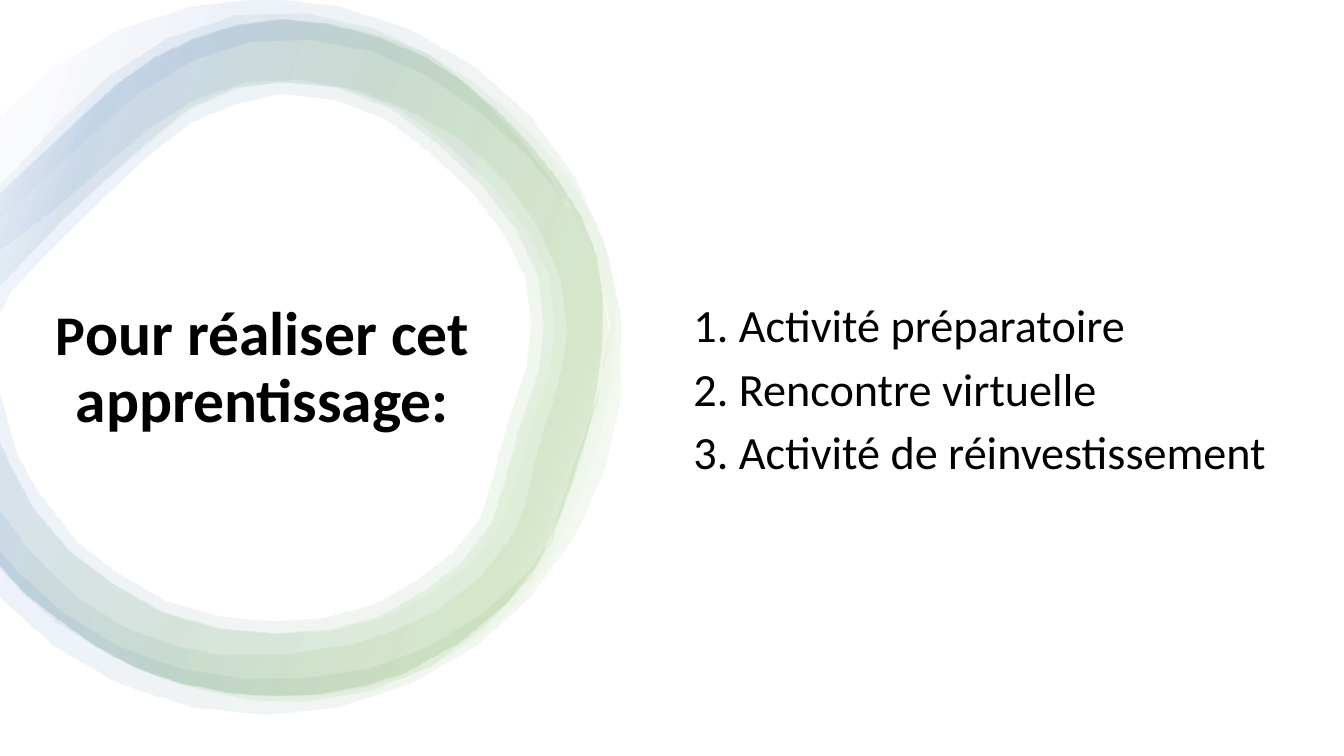
import math
from dataclasses import dataclass

from lxml import etree
from pptx import Presentation
from pptx.dml import color
from pptx.enum import text
from pptx.oxml import ns
from pptx.util import Pt


@dataclass(frozen=True)
class Theme:
    font: str = "Calibri"
    ink: str = "000000"
    green: str = "70AD47"
    blue: str = "4472C4"
    white: str = "FFFFFF"
    alpha: int = 9
    angle: int = 200
    first: int = 40
    head: int = 44
    item: int = 33


THEME = Theme()
UNIT = 0.72  # points per ring unit (a hundredth of an inch)
CHORD = 50  # usual length of a drawn segment, in ring units

# Ring edges run clockwise, from the upper left to the lower left.
WAVE_OUT = [
    (-1, 185), (18, 165), (60, 120), (108, 76), (165, 39), (233, 16), (304, 14),
    (372, 29), (426, 55), (483, 104), (546, 178), (593, 264), (604, 330),
    (593, 397), (569, 468), (548, 536), (526, 573), (481, 621), (427, 661),
    (365, 686), (299, 696), (250, 694), (170, 676), (110, 650), (55, 616),
    (24, 589), (-1, 562)]
WAVE_IN = [
    (-1, 250), (57, 206), (104, 165), (149, 127), (196, 98), (245, 82), (298, 80),
    (352, 89), (403, 109), (454, 137), (498, 176), (532, 223), (555, 275),
    (563, 330), (553, 383), (534, 443), (520, 502), (510, 528), (477, 572),
    (431, 607), (352, 638), (289, 648), (223, 649), (180, 642), (124, 622),
    (75, 591), (28, 544), (-1, 504)]
BAND_OUT = [
    (-1, 193), (55, 140), (154, 56), (278, 19), (417, 54), (525, 143), (591, 253),
    (591, 387), (553, 515), (502, 598), (399, 668), (270, 690), (136, 663),
    (26, 589), (-1, 559)]
SLIM_IN = [
    (-1, 285), (60, 220), (98, 184), (186, 108), (232, 87), (278, 81),
    (335, 87), (388, 108), (478, 184), (533, 273), (534, 366), (513, 428),
    (501, 473), (487, 518), (459, 555), (376, 611), (270, 628), (161, 607),
    (69, 546), (33, 503), (-1, 435)]
BROAD_IN = [
    (-1, 314), (12, 288), (69, 229), (107, 192), (190, 121), (278, 93), (332, 99),
    (382, 118), (469, 192), (521, 277), (522, 362), (501, 425), (489, 470),
    (476, 513), (450, 546), (371, 599), (271, 616), (166, 596), (77, 537),
    (38, 487), (17, 449), (-1, 384)]
DISC_IN = [
    (-1, 218), (41, 180), (89, 135), (137, 93), (189, 61), (246, 42), (307, 40),
    (367, 51), (423, 76), (474, 111), (521, 154), (562, 203), (591, 260),
    (604, 323), (593, 386), (567, 464), (545, 534), (523, 567), (477, 609),
    (423, 642), (365, 663), (303, 672), (240, 673), (178, 663), (119, 642),
    (64, 609), (16, 566), (-1, 545)]


def arc(mid_x, mid_y, radius, reach):
    """Points of a circle open on the left, reach degrees each way."""
    turns = [math.radians(deg) for deg in range(-reach, reach + 1, 12)]
    return [(mid_x + radius * math.cos(turn), mid_y + radius * math.sin(turn))
            for turn in turns]


def stretch(edge, ratio):
    return [(x * ratio, y) for x, y in edge]


def smooth(edge):
    """Catmull-Rom curve through an open edge, cut into even chords."""
    knots = [edge[0], *edge, edge[-1]]
    curve = []
    for a, b, c, d in zip(knots, knots[1:], knots[2:], knots[3:]):
        steps = max(1, round(math.dist(b, c) / CHORD))
        for step in range(steps):
            t = step / steps
            curve.append(tuple(
                q + t * (r - p + t * (2 * p - 5 * q + 4 * r - s
                                      + t * (3 * (q - r) + s - p))) / 2
                for p, q, r, s in zip(a, b, c, d)))
    return curve + [edge[-1]]


def fade(shape, stops):
    """Fill with a sheer linear gradient of (percent, colour) stops."""
    shape.fill.background()
    blank = shape.element.spPr.find(ns.qn("a:noFill"))
    grad = etree.Element(ns.qn("a:gradFill"), rotWithShape="1")
    row = etree.SubElement(grad, ns.qn("a:gsLst"))
    for place, tone in stops:
        stop = etree.SubElement(row, ns.qn("a:gs"), pos=str(place * 1000))
        paint = etree.SubElement(stop, ns.qn("a:srgbClr"), val=tone)
        etree.SubElement(paint, ns.qn("a:alpha"), val=str(THEME.alpha * 1000))
    etree.SubElement(grad, ns.qn("a:lin"), ang=str(THEME.angle * 60000), scaled="0")
    blank.getparent().replace(blank, grad)


def add_ring(slide, outer, inner, stops):
    outline = smooth(outer) + smooth(inner)[::-1]
    dots = [(Pt(x * UNIT), Pt(y * UNIT)) for x, y in outline]
    pen = slide.shapes.build_freeform(*dots[0])
    pen.add_line_segments(dots[1:], close=True)
    ring = pen.convert_to_shape()
    ring.shadow.inherit = False
    ring.line.fill.background()
    fade(ring, stops)


def place(shape, left, top, width, height):
    shape.left, shape.top = Pt(left), Pt(top)
    shape.width, shape.height = Pt(width), Pt(height)
    frame = shape.text_frame
    frame.word_wrap = True
    frame.auto_size = text.MSO_AUTO_SIZE.NONE
    frame.vertical_anchor = text.MSO_ANCHOR.MIDDLE
    return frame


def style(para, size, bold=False):
    para.line_spacing = 0.9
    font = para.font
    font.name, font.size, font.bold = THEME.font, Pt(size), bold
    font.color.rgb = color.RGBColor.from_string(THEME.ink)


def set_title(slide):
    title = slide.shapes.title
    frame = place(title, 11.52, 154.8, 352.08, 217.44)
    para = frame.paragraphs[0]
    para.alignment = text.PP_ALIGN.CENTER
    style(para, THEME.head, bold=True)
    first = para.add_run()
    first.text = "P"
    first.font.size = Pt(THEME.first)
    para.add_run().text = "our réaliser cet apprentissage:"
    title.element.getparent().append(title.element)  # in front of the rings


def add_list(slide, items):
    box = slide.shapes.add_textbox(0, 0, 0, 0)
    frame = place(box, 479.52, 73.44, 441.36, 411.84)
    frame.margin_left = Pt(15.84)
    frame.text = "\n".join(items)
    for para in frame.paragraphs:
        style(para, THEME.item)
        para.space_before = Pt(10)


def main():
    deck = Presentation()
    deck.slide_width, deck.slide_height = Pt(960), Pt(540)
    slide = deck.slides.add_slide(deck.slide_layouts.get_by_name("Title Only"))

    green, blue, white = THEME.green, THEME.blue, THEME.white
    pale = [(0, white), (2, white)]
    blend = pale + [(16, green), (85, blue), (100, white)]
    rings = [
        (WAVE_OUT, WAVE_IN, [(0, green), (37, green), (85, blue), (100, white)]),
        (stretch(BAND_OUT, 1.02), stretch(SLIM_IN, 1.02),
         pale + [(54, green), (100, white)]),
        (BAND_OUT, BROAD_IN, blend),
        (BAND_OUT, SLIM_IN, blend),
        (arc(262, 354, 355, 138), DISC_IN,
         pale + [(16, green), (74, blue), (100, white)]),
    ]
    for ring in rings:
        add_ring(slide, *ring)

    set_title(slide)
    add_list(slide, ["1. Activité préparatoire", "2. Rencontre virtuelle",
                     "3. Activité de réinvestissement"])
    deck.save("out.pptx")


if __name__ == "__main__":
    main()
